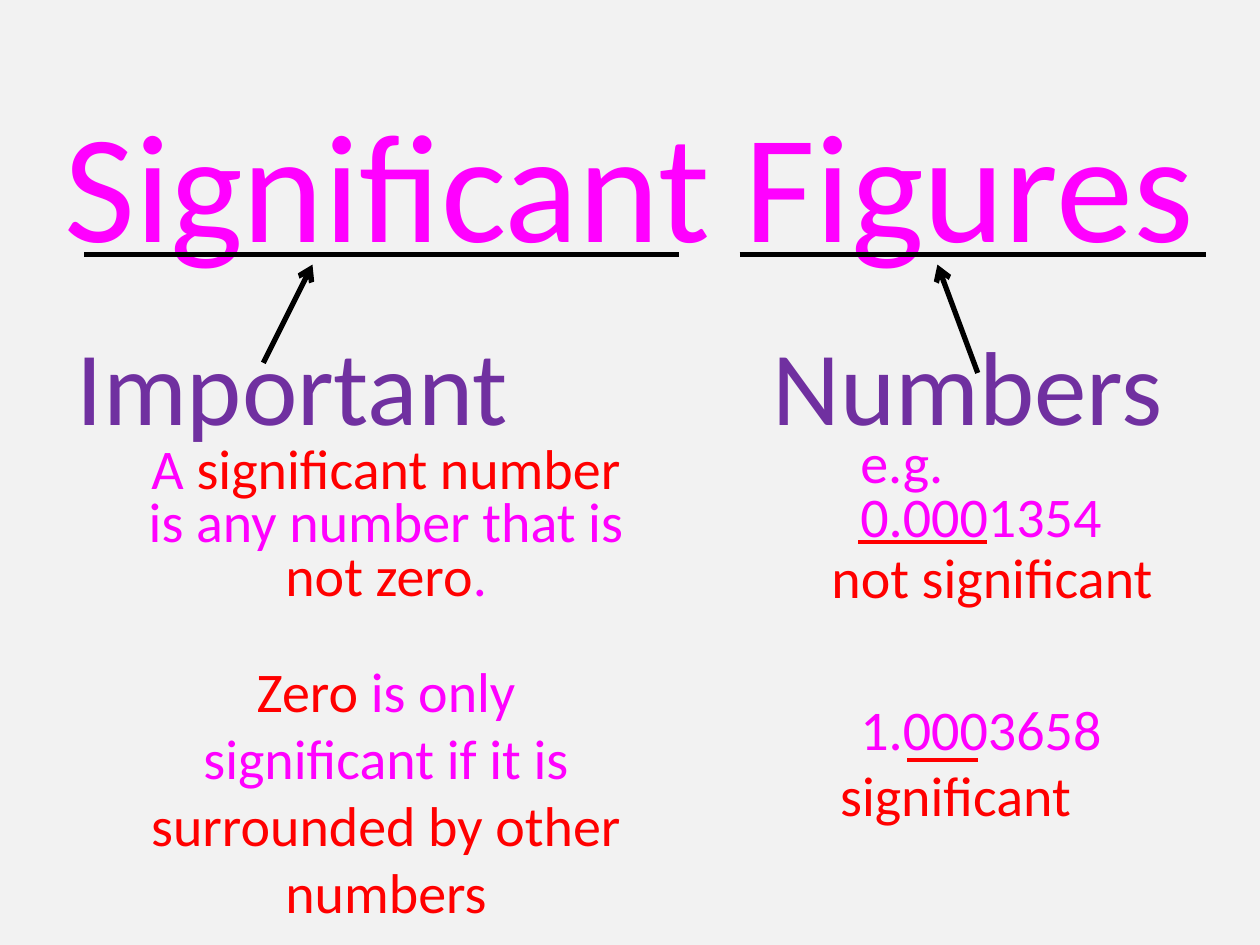
from lxml.etree import SubElement
from pptx import Presentation
from pptx.dml.color import RGBColor
from pptx.enum.shapes import MSO_CONNECTOR
from pptx.enum.text import MSO_ANCHOR, PP_ALIGN
from pptx.oxml.ns import qn
from pptx.util import Inches, Pt

FONT = "Calibri"
BACKGROUND, BLACK = "F2F2F2", "000000"
PINK, PURPLE, RED = "FF00FF", "7030A0", "FF0000"
LEFT, CENTER = PP_ALIGN.LEFT, PP_ALIGN.CENTER

# A paragraph: (line spacing, points before, [(text, colour), ...])
TITLE = [(1, 0, [("Significant Figures", PINK)])]
IMPORTANT = [(0.8, 0, [("Important", PURPLE)])]
NUMBERS = [(0.8, 0, [("Numbers", PURPLE)])]
RULES = [
    (0.8, 0, [("A ", PINK), ("significant number ", RED),
              ("is any number that is ", PINK), ("not zero", RED), (".", PINK)]),
    (1, 28, [("Zero", RED), (" is only significant if it is ", PINK),
             ("surrounded by other numbers", RED)]),
]
EXAMPLES = [
    (0.8, 0, [("e.g.", PINK)]),
    (0.8, 0, [("0.0001354", PINK)]),
    (0.8, 91, [("1.0003658", PINK)]),
]
NOT_SIGNIFICANT = [(0.8, 0, [("not significant", RED)])]
SIGNIFICANT = [(0.8, 0, [("significant", RED)])]

# (left, top, width, height), text size, alignment, paragraphs
TEXTS = [
    ((0.35, 0.7, 9.29, 1.5), 88.2, CENTER, TITLE),
    ((0.51, 2.74, 3.62, 0.82), 60, CENTER, IMPORTANT),
    ((5.87, 2.74, 3.62, 0.82), 60, CENTER, NUMBERS),
    ((0.98, 3.54, 4.17, 3.86), 32, CENTER, RULES),
    ((6.73, 3.5, 2.91, 2.57), 32, LEFT, EXAMPLES),
    ((6.5, 4.41, 2.91, 0.43), 32, LEFT, NOT_SIGNIFICANT),
    ((6.57, 6.14, 2.36, 0.43), 32, LEFT, SIGNIFICANT),
]

# start, end, colour, width, arrowhead at the end
LINES = [
    ((2.09, 2.88), (2.48, 2.1), BLACK, 3, True),
    ((7.76, 2.96), (7.44, 2.1), BLACK, 3, True),
    ((0.67, 2.02), (5.39, 2.02), BLACK, 3, False),
    ((5.87, 2.02), (9.57, 2.02), BLACK, 3, False),
    ((6.81, 4.3), (7.83, 4.3), RED, 2.5, False),
    ((7.2, 6.03), (7.76, 6.03), RED, 2.5, False),
]


def paint(color_format, color):
    color_format.rgb = RGBColor.from_string(color)


def add_text(page, place, size, align, paragraphs):
    frame = page.shapes.add_textbox(*map(Inches, place)).text_frame
    frame.word_wrap = True
    frame.vertical_anchor = MSO_ANCHOR.TOP
    frame.margin_top = frame.margin_bottom = 0
    for index, (spacing, before, spans) in enumerate(paragraphs):
        para = frame.add_paragraph() if index else frame.paragraphs[0]
        para.alignment = align
        para.line_spacing = spacing
        para.space_before = Pt(before)
        for text, color in spans:
            span = para.add_run()
            span.text = text
            span.font.name = FONT
            span.font.size = Pt(size)
            paint(span.font.color, color)


def add_line(page, start, end, color, width, arrow):
    line = page.shapes.add_connector(
        MSO_CONNECTOR.STRAIGHT, *map(Inches, start + end))
    paint(line.line.fill.fore_color if line.line.fill.solid() else line.line.color, color)
    line.line.width = Pt(width)
    if arrow:
        SubElement(line.line._get_or_add_ln(), qn("a:tailEnd"), type="arrow")
    SubElement(line._element.spPr, qn("a:effectLst"))


def main():
    deck = Presentation()
    deck.slide_width, deck.slide_height = Inches(10), Inches(7.5)
    page = deck.slides.add_slide(deck.slide_layouts[6])
    page.background.fill.solid()
    paint(page.background.fill.fore_color, BACKGROUND)
    for text in TEXTS:
        add_text(page, *text)
    for line in LINES:
        add_line(page, *line)
    deck.save("out.pptx")


if __name__ == "__main__":
    main()
